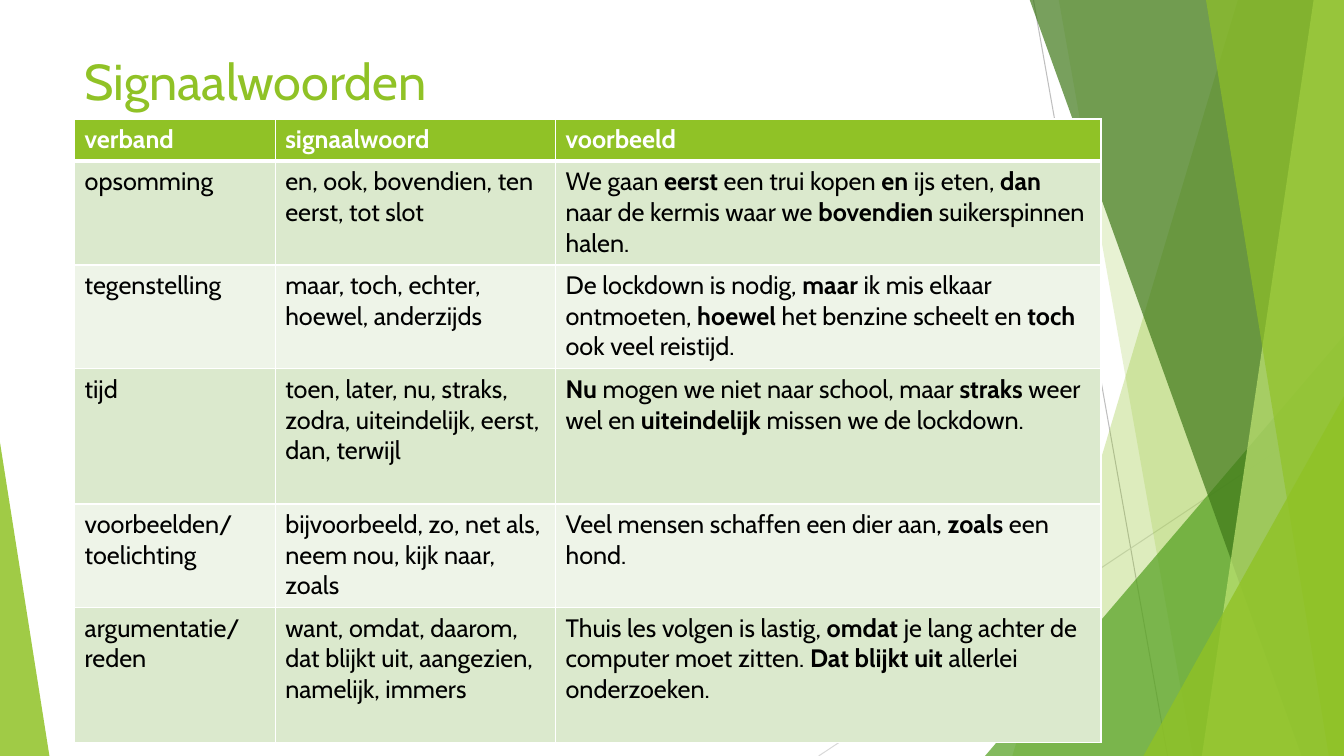
from dataclasses import dataclass

from lxml import etree
from pptx import Presentation
from pptx.dml.color import RGBColor
from pptx.enum.shapes import MSO_CONNECTOR, MSO_SHAPE
from pptx.enum.text import MSO_ANCHOR
from pptx.oxml.ns import qn
from pptx.util import Inches, Pt

STRAIGHT = MSO_CONNECTOR.STRAIGHT
TRIANGLE = MSO_SHAPE.ISOSCELES_TRIANGLE
MIDDLE = MSO_ANCHOR.MIDDLE


@dataclass(frozen=True)
class Theme:
    font: str = "Cabin"
    title_size: int = 36
    table_size: int = 18
    green: str = "90C226"
    mid_green: str = "54A021"
    dark_green: str = "3F7819"
    light_green: str = "C0E474"
    odd_row: str = "DBE9CD"
    even_row: str = "EEF4E8"
    dark_line: str = "BFBFBF"
    light_line: str = "D9D9D9"
    white: str = "FFFFFF"
    black: str = "000000"


theme = Theme()


def add_span(para, text, size, color, bold=False):
    span = para.add_run()
    span.text = text
    span.font.name = theme.font
    span.font.size = Pt(size)
    span.font.bold = bold
    span.font.color.rgb = RGBColor.from_string(color)


def paint(shape, color, opacity):
    shape.shadow.inherit = False
    shape.line.fill.background()
    shape.fill.solid()
    shape.fill.fore_color.rgb = RGBColor.from_string(color)
    tint = shape.fill._xPr.find(qn("a:solidFill"))[0]
    etree.SubElement(tint, qn("a:alpha"), val=str(opacity * 1000))


deck = Presentation()
deck.slide_width = Inches(13.33)
deck.slide_height = Inches(7.5)
page = deck.slides.add_slide(deck.slide_layouts[6])

thin_lines = [
    (10.25, 0, 11.58, 7.5, theme.dark_line),
    (13.33, 4.03, 8.12, 7.5, theme.light_line),
]
for x1, y1, x2, y2, color in thin_lines:
    line = page.shapes.add_connector(STRAIGHT, Inches(x1), Inches(y1), Inches(x2), Inches(y2))
    line.line.width = Pt(0.75)
    line.line.color.rgb = RGBColor.from_string(color)
    etree.SubElement(line._element.spPr, qn("a:effectLst"))

bands_behind = [
    (12.28, 10.04, theme.green, 30),
    (10.5, 11.83, theme.green, 20),
]
bands_in_front = [
    (10.21, 12.91, theme.dark_green, 70),
    (13.03, 11.92, theme.light_green, 70),
    (11.96, 13.18, theme.green, 65),
]
triangles_behind = [(9.77, 3.33, 3.56, 4.17, 1, theme.mid_green, 72)]
triangles_in_front = [
    (11.34, 3.93, 1.99, 3.57, 1, theme.green, 80),
    (0, 4.39, 0.49, 3.11, 0, theme.green, 85),
]
layers = [(bands_behind, triangles_behind), (bands_in_front, triangles_in_front)]
for bands, triangles in layers:
    for top_x, bottom_x, color, opacity in bands:
        outline = page.shapes.build_freeform(Inches(top_x), Inches(-0.01))
        corners = [(13.33, -0.01), (13.33, 7.5), (bottom_x, 7.5)]
        outline.add_line_segments([(Inches(x), Inches(y)) for x, y in corners], close=True)
        paint(outline.convert_to_shape(), color, opacity)
    for left, top, width, height, apex, color, opacity in triangles:
        triangle = page.shapes.add_shape(
            TRIANGLE, Inches(left), Inches(top), Inches(width), Inches(height))
        triangle.adjustments[0] = apex
        paint(triangle, color, opacity)

title = page.shapes.add_textbox(Inches(0.74), Inches(0.41), Inches(9.4), Inches(0.77))
title.text_frame.word_wrap = True
title.text_frame.vertical_anchor = MIDDLE
add_span(title.text_frame.paragraphs[0], "Signaalwoorden", theme.title_size, theme.green)

rows = [
    ("verband", "signaalwoord", "voorbeeld"),
    ("opsomming", "en, ook, bovendien, ten eerst, tot slot",
     "We gaan *eerst* een trui kopen *en* ijs eten, *dan* naar de kermis "
     "waar we *bovendien* suikerspinnen halen."),
    ("tegenstelling", "maar, toch, echter, hoewel, anderzijds",
     "De lockdown is nodig, *maar* ik mis elkaar ontmoeten, *hoewel* het "
     "benzine scheelt en *toch* ook veel reistijd."),
    ("tijd", "toen, later, nu, straks, zodra, uiteindelijk, eerst, dan, terwijl",
     "*Nu* mogen we niet naar school, maar *straks* weer wel en "
     "*uiteindelijk* missen we de lockdown."),
    ("voorbeelden/\ntoelichting", "bijvoorbeeld, zo, net als, neem nou, kijk naar, zoals",
     "Veel mensen schaffen een dier aan, *zoals* een hond."),
    ("argumentatie/\nreden", "want, omdat, daarom, dat blijkt uit, aangezien, namelijk, immers",
     "Thuis les volgen is lastig, *omdat* je lang achter de computer moet "
     "zitten. *Dat blijkt uit *allerlei onderzoeken."),
]
column_widths = [1.99, 2.78, 5.41]
row_heights = [0.42, 1.03, 1.03, 1.34, 1.03, 1.34]

table = page.shapes.add_table(
    len(rows), len(column_widths), Inches(0.74), Inches(1.18),
    Inches(sum(column_widths)), Inches(sum(row_heights))).table
for column, width in zip(table.columns, column_widths):
    column.width = Inches(width)
for row, height in zip(table.rows, row_heights):
    row.height = Inches(height)

for row_index, texts in enumerate(rows):
    header = row_index == 0
    fill = theme.green if header else theme.odd_row if row_index % 2 else theme.even_row
    color = theme.white if header else theme.black
    borders = {"L": 1, "R": 1, "T": 3 if row_index == 1 else 1, "B": 3 if header else 1}
    for column_index, text in enumerate(texts):
        cell = table.cell(row_index, column_index)
        properties = cell._tc.get_or_add_tcPr()
        for side, width in borders.items():
            border = etree.SubElement(properties, qn(f"a:ln{side}"), w=str(Pt(width)))
            solid = etree.SubElement(border, qn("a:solidFill"))
            etree.SubElement(solid, qn("a:srgbClr"), val=theme.white)
        cell.fill.solid()
        cell.fill.fore_color.rgb = RGBColor.from_string(fill)
        frame = cell.text_frame
        for line_index, content in enumerate(text.split("\n")):
            para = frame.add_paragraph() if line_index else frame.paragraphs[0]
            for part_index, part in enumerate(content.split("*")):
                if part:
                    bold = header or part_index % 2 == 1
                    add_span(para, part, theme.table_size, color, bold)

deck.save("out.pptx")
